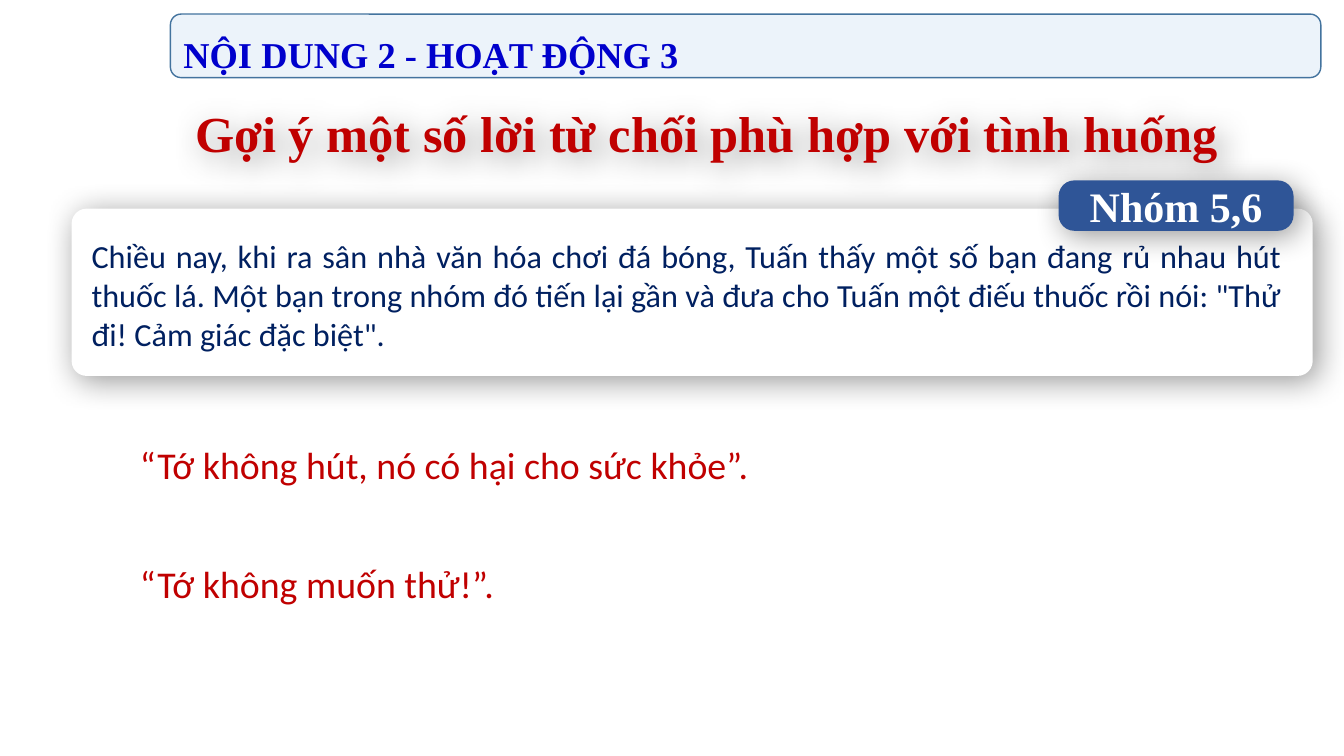
from lxml import etree
from pptx import Presentation
from pptx.dml.color import RGBColor
from pptx.enum.shapes import MSO_SHAPE as Shape
from pptx.enum.text import MSO_ANCHOR as Anchor, PP_ALIGN as Align
from pptx.oxml.ns import qn
from pptx.util import Inches, Pt

NAVY = RGBColor(0x00, 0x20, 0x60)
BLUE = RGBColor(0x00, 0x00, 0xCC)
RED = RGBColor(0xC0, 0x00, 0x00)
WHITE = RGBColor(0xFF, 0xFF, 0xFF)
PALE = RGBColor(0xEC, 0xF3, 0xFA)
STEEL = RGBColor(0x43, 0x73, 0x9E)
BADGE = RGBColor(0x2F, 0x55, 0x97)
SERIF, SANS = "Times New Roman", "Calibri"

HEADER = "NỘI DUNG 2 - HOẠT ĐỘNG 3"
TITLE = "Gợi ý một số lời từ chối phù hợp với tình huống"
GROUP = "Nhóm 5,6"
STORY = (
    "Chiều nay, khi ra sân nhà văn hóa chơi đá bóng, Tuấn thấy một số bạn "
    "đang rủ nhau hút thuốc lá. Một bạn trong nhóm đó tiến lại gần và đưa "
    "cho Tuấn một điếu thuốc rồi nói: \"Thử đi! Cảm giác đặc biệt\"."
)
REPLIES = ["“Tớ không hút, nó có hại cho sức khỏe”.", "“Tớ không muốn thử!”."]
REPLY_TOP, REPLY_STEP = 4.33, 1.18


def add_shadow(shape):
    """Give the shape a soft black shadow towards the lower right."""
    effects = shape._element.spPr.find(qn("a:effectLst"))
    outer = etree.SubElement(effects, qn("a:outerShdw"), blurRad=str(Pt(22)),
                             dist=str(Pt(5)), dir="2700000", algn="tl", rotWithShape="0")
    color = etree.SubElement(outer, qn("a:srgbClr"), val="000000")
    etree.SubElement(color, qn("a:alpha"), val="40000")


def add_panel(slide, box, fill=None, line=None, round=None, shadow=True):
    panel = slide.shapes.add_shape(Shape.ROUNDED_RECTANGLE, *map(Inches, box))
    panel.shadow.inherit = False
    if round is not None:
        panel.adjustments[0] = round
    if fill is None:
        panel.fill.background()
    else:
        panel.fill.solid()
        panel.fill.fore_color.rgb = fill
    if line is None:
        panel.line.fill.background()
    else:
        panel.line.color.rgb = line
        panel.line.width = Pt(1)
    if shadow:
        add_shadow(panel)
    return panel


def put_text(shape, text, size, color, font=SANS, bold=False, align=Align.JUSTIFY,
             anchor=Anchor.TOP, spacing=None, top=0.05):
    frame = shape.text_frame
    frame.word_wrap = True
    frame.vertical_anchor = anchor
    frame.margin_top = Inches(top)
    para = frame.paragraphs[0]
    para.alignment = align
    para.line_spacing = spacing
    run = para.add_run()
    run.text = text
    run.font.name = font
    run.font.size = Pt(size)
    run.font.bold = bold
    run.font.color.rgb = color


def add_text(slide, box, text, **style):
    put_text(slide.shapes.add_textbox(*map(Inches, box)), text, **style)


def main():
    deck = Presentation()
    deck.slide_width, deck.slide_height = Inches(13.33), Inches(7.5)
    slide = deck.slides.add_slide(deck.slide_layouts[6])
    heading = dict(font=SERIF, bold=True, anchor=Anchor.MIDDLE)

    header = add_panel(slide, (1.69, 0.14, 11.41, 0.63), PALE, STEEL, shadow=False)
    put_text(header, HEADER, 26, BLUE, align=Align.LEFT, spacing=1.2, top=0.13, **heading)

    title = add_panel(slide, (1.43, 0.97, 11.16, 0.69), round=0.31)
    put_text(title, TITLE, 36, RED, align=Align.CENTER, **heading)

    for i, reply in enumerate(REPLIES):
        box = (1.29, REPLY_TOP + i * REPLY_STEP, 11.2, 0.56)
        add_text(slide, box, reply, size=27, color=RED)

    add_panel(slide, (0.71, 2.07, 12.31, 1.66), WHITE, round=0.09)
    add_text(slide, (0.81, 2.3, 12.02, 1.26), STORY, size=23, color=NAVY)

    badge = add_panel(slide, (10.5, 1.79, 2.33, 0.5), BADGE, round=0.31)
    put_text(badge, GROUP, 30, WHITE, align=Align.CENTER, **heading)

    deck.save("out.pptx")


if __name__ == "__main__":
    main()
